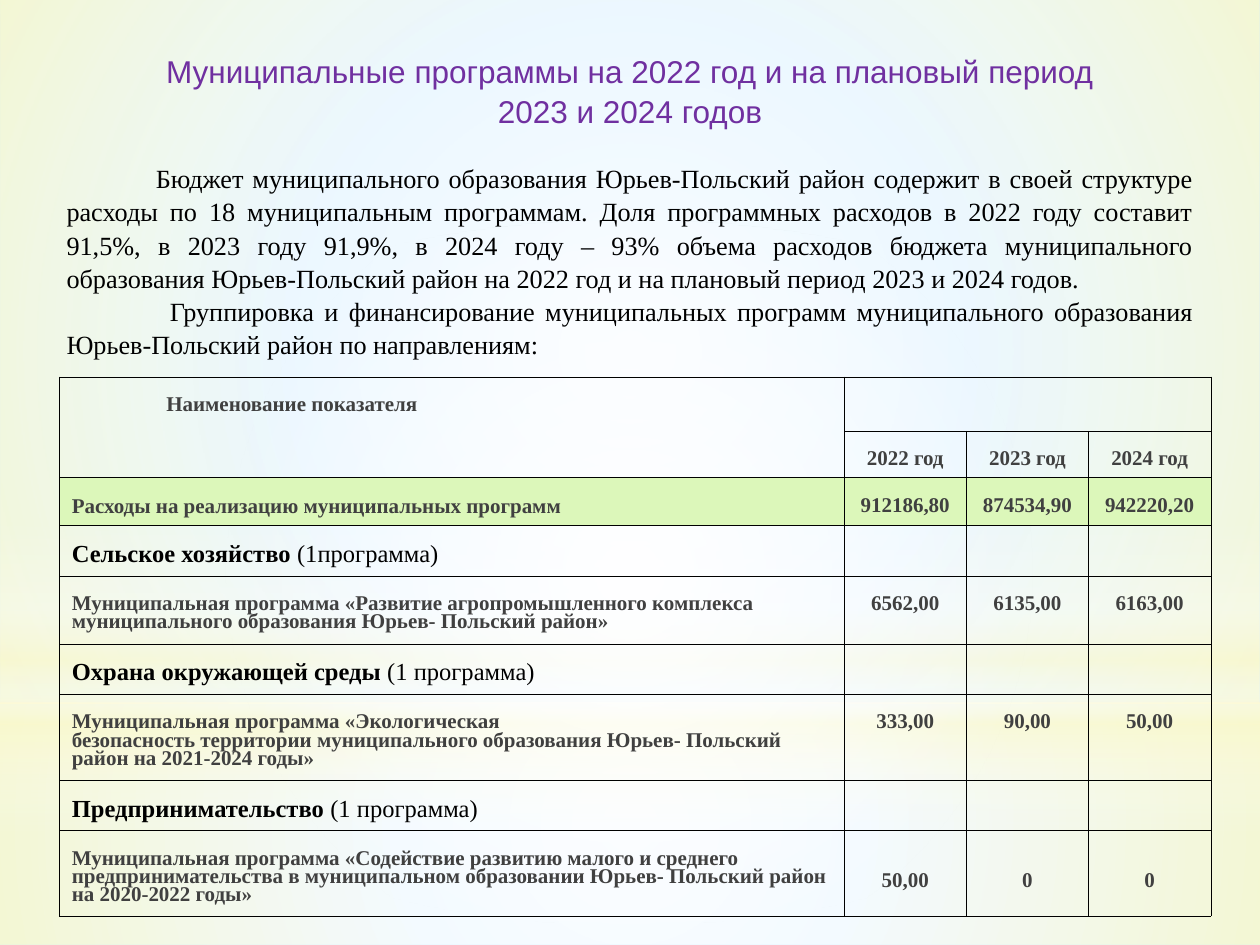
from pptx import Presentation
from pptx.dml.color import RGBColor
from pptx.enum.shapes import MSO_SHAPE
from pptx.enum.text import MSO_ANCHOR, MSO_AUTO_SIZE, PP_ALIGN
from pptx.oxml import parse_xml
from pptx.oxml.ns import nsdecls, qn
from pptx.util import Inches, Pt

RECTANGLE, OVAL = MSO_SHAPE.RECTANGLE, MSO_SHAPE.OVAL
TOP, MIDDLE = MSO_ANCHOR.TOP, MSO_ANCHOR.MIDDLE
LEFT, CENTER, JUSTIFY = PP_ALIGN.LEFT, PP_ALIGN.CENTER, PP_ALIGN.JUSTIFY
NO_AUTOFIT = MSO_AUTO_SIZE.NONE

SERIF = "Times New Roman"
BLACK, GRAY, PURPLE, GREEN = "000000", "404040", "7030A0", "DCF7BA"
WHITE, YELLOW = "FFFFFF", "FEFAC9"
RADIAL = '<a:path path="circle"><a:fillToRect l="50000" t="50000" r="50000" b="50000"/></a:path>'
VERTICAL = '<a:lin ang="5400000" scaled="0"/>'

GLOWS = [
    (RECTANGLE, (0, 5.58, 10, 1.92), RADIAL,
     [(0, WHITE, 91), (37, WHITE, 76), (100, YELLOW, 79)]),
    (RECTANGLE, (0, 0, 10, 5.58), RADIAL,
     [(0, WHITE, 89), (48, WHITE, 62), (100, YELLOW, 79)]),
    (RECTANGLE, (0, 4.12, 10, 2.5), VERTICAL,
     [(0, WHITE, 0), (29, WHITE, 30), (45, YELLOW, 40),
      (55, WHITE, 26), (65, YELLOW, 60), (100, WHITE, 0)]),
    (OVAL, (0, 1.75, 10, 5.58), RADIAL, [(0, WHITE, 100), (56, WHITE, 0)]),
]
TITLE = ["Муниципальные программы на 2022 год и на плановый период",
         "2023 и 2024 годов"]
INTRO = [
    (0.71, "Бюджет муниципального образования Юрьев-Польский район содержит в своей "
           "структуре расходы по 18 муниципальным программам. Доля программных расходов "
           "в 2022 году составит 91,5%, в 2023 году 91,9%, в 2024 году – 93% объема "
           "расходов бюджета муниципального образования Юрьев-Польский район на 2022 год "
           "и на плановый период 2023 и 2024 годов."),
    (0.82, "Группировка и финансирование муниципальных программ муниципального "
           "образования Юрьев-Польский район по направлениям:"),
]
YEARS = ["2022 год", "2023 год", "2024 год"]
TOTAL = ("Расходы на реализацию муниципальных программ",
         ["912186,80", "874534,90", "942220,20"])
SECTIONS = [
    ("Сельское хозяйство ", "(1программа)",
     ["Муниципальная программа «Развитие агропромышленного комплекса "
      "муниципального образования Юрьев- Польский район»"],
     ["6562,00", "6135,00", "6163,00"], 0.16),
    ("Охрана окружающей среды ", "(1 программа)",
     ["Муниципальная программа «Экологическая",
      "безопасность территории муниципального образования Юрьев- Польский",
      "район на 2021-2024 годы»"],
     ["333,00", "90,00", "50,00"], 0.16),
    ("Предпринимательство", " (1 программа)",
     ["Муниципальная программа «Содействие развитию малого и среднего "
      "предпринимательства в муниципальном образовании Юрьев- Польский "
      "район на 2020-2022 годы»"],
     ["50,00", "0", "0"], 0.34),
]
COLUMN_WIDTHS = [6.23, 0.97, 0.97, 0.97]
ROW_HEIGHTS = [0.43, 0.37, 0.38, 0.4, 0.54, 0.4, 0.68, 0.4, 0.68]


def color(value):
    """Turn a hex string into a colour."""
    return RGBColor.from_string(value)


def add_span(para, text, size, tint, font=SERIF, bold=False):
    """Add one formatted run to a paragraph."""
    span = para.add_run()
    span.text = text
    span.font.name, span.font.size, span.font.bold = font, Pt(size), bold
    span.font.color.rgb = color(tint)


def next_para(frame, index):
    """Return the first paragraph of a frame, or a new one after it."""
    return frame.add_paragraph() if index else frame.paragraphs[0]


def place(shape, box):
    """Move a shape to a box given in inches."""
    shape.left, shape.top, shape.width, shape.height = map(Inches, box)


def add_backdrop(page):
    """Lay the soft gradient glows behind the title."""
    page.background.fill.solid()
    page.background.fill.fore_color.rgb = color("CCECFF")
    for kind, box, direction, stops in GLOWS:
        glow = page.shapes.add_shape(kind, *map(Inches, box))
        glow.shadow.inherit = False
        glow.line.fill.background()
        marks = "".join(
            f'<a:gs pos="{position * 1000}"><a:srgbClr val="{tint}">'
            f'<a:alpha val="{opacity * 1000}"/></a:srgbClr></a:gs>'
            for position, tint, opacity in stops)
        gradient = parse_xml(f'<a:gradFill {nsdecls("a")} rotWithShape="1">'
                             f'<a:gsLst>{marks}</a:gsLst>{direction}</a:gradFill>')
        glow.element.spPr.find(qn("a:prstGeom")).addnext(gradient)
        page.shapes.title.element.addprevious(glow.element)


def add_title(page, box):
    """Write the two-line title in its placeholder."""
    title = page.shapes.title
    place(title, box)
    frame = title.text_frame
    frame.auto_size, frame.vertical_anchor = NO_AUTOFIT, MIDDLE
    for index, line in enumerate(TITLE):
        para = next_para(frame, index)
        para.alignment, para.line_spacing = CENTER, 1.05
        add_span(para, line, 18, PURPLE, "Arial")


def add_intro(page, box):
    """Write the justified introduction with first-line indents."""
    frame = page.shapes.add_textbox(*map(Inches, box)).text_frame
    frame.word_wrap = True
    for index, (indent, text) in enumerate(INTRO):
        para = next_para(frame, index)
        para.alignment, para.line_spacing = JUSTIFY, 1.05
        para._p.get_or_add_pPr().set("indent", str(Inches(indent)))
        add_span(para, text, 15, BLACK)


def style_cell(cell):
    """Clear the fill of a cell and draw thin black borders."""
    properties = cell._tc.get_or_add_tcPr()
    for side in ("lnL", "lnR", "lnT", "lnB"):
        properties.append(parse_xml(
            f'<a:{side} {nsdecls("a")} w="762"><a:solidFill>'
            f'<a:srgbClr val="{BLACK}"/></a:solidFill></a:{side}>'))
    cell.fill.background()


def write_cell(cell, lines, align=LEFT, top=0.16, left=0.1, anchor=TOP):
    """Fill a cell with paragraphs made of (text, size, colour, bold) spans."""
    cell.margin_left, cell.margin_right = Inches(left), Inches(0.1)
    cell.margin_top, cell.margin_bottom = Inches(top), Inches(0.05)
    cell.vertical_anchor = anchor
    for index, spans in enumerate(lines):
        para = next_para(cell.text_frame, index)
        para.alignment, para.line_spacing = align, 0.78
        for text, size, tint, bold in spans:
            add_span(para, text, size, tint, bold=bold)


def label(text):
    """Describe one line of bold gray table text."""
    return [(text, 12, GRAY, True)]


def write_values(table, row, values, top=0.16):
    """Write the three yearly entries of a row."""
    for column, value in enumerate(values, 1):
        write_cell(table.cell(row, column), [label(value)], CENTER, top)


def add_program_table(page, box):
    """Build the table of programmes and their yearly funding."""
    table = page.shapes.add_table(len(ROW_HEIGHTS), len(COLUMN_WIDTHS),
                                  *map(Inches, box)).table
    table.first_row = table.horz_banding = False
    for column, width in zip(table.columns, COLUMN_WIDTHS):
        column.width = Inches(width)
    for row, height in zip(table.rows, ROW_HEIGHTS):
        row.height = Inches(height)
    for cell in table.iter_cells():
        style_cell(cell)

    table.cell(0, 0).merge(table.cell(1, 0))
    table.cell(0, 1).merge(table.cell(0, 3))
    write_cell(table.cell(0, 0), [label("Наименование показателя")], left=0.85)
    write_values(table, 1, YEARS)

    name, sums = TOTAL
    write_cell(table.cell(2, 0), [label(name)], anchor=MIDDLE)
    write_values(table, 2, sums)
    for cell in table.rows[2].cells:
        cell.fill.solid()
        cell.fill.fore_color.rgb = color(GREEN)

    for index, (heading, count, lines, sums, top) in enumerate(SECTIONS):
        row = 3 + 2 * index
        write_cell(table.cell(row, 0),
                   [[(heading, 14, BLACK, True), (count, 14, BLACK, False)]])
        write_cell(table.cell(row + 1, 0), [label(line) for line in lines])
        write_values(table, row + 1, sums, top)


def main():
    """Build the slide and save the deck."""
    deck = Presentation()
    deck.slide_width, deck.slide_height = Inches(10), Inches(7.5)
    page = deck.slides.add_slide(deck.slide_layouts[5])
    add_backdrop(page)
    add_title(page, (0.67, 0.36, 8.66, 0.71))
    add_intro(page, (0.43, 1.23, 9.14, 1.61))
    add_program_table(page, (0.47, 2.99, 9.14, 4.28))
    deck.save("out.pptx")


if __name__ == "__main__":
    main()
